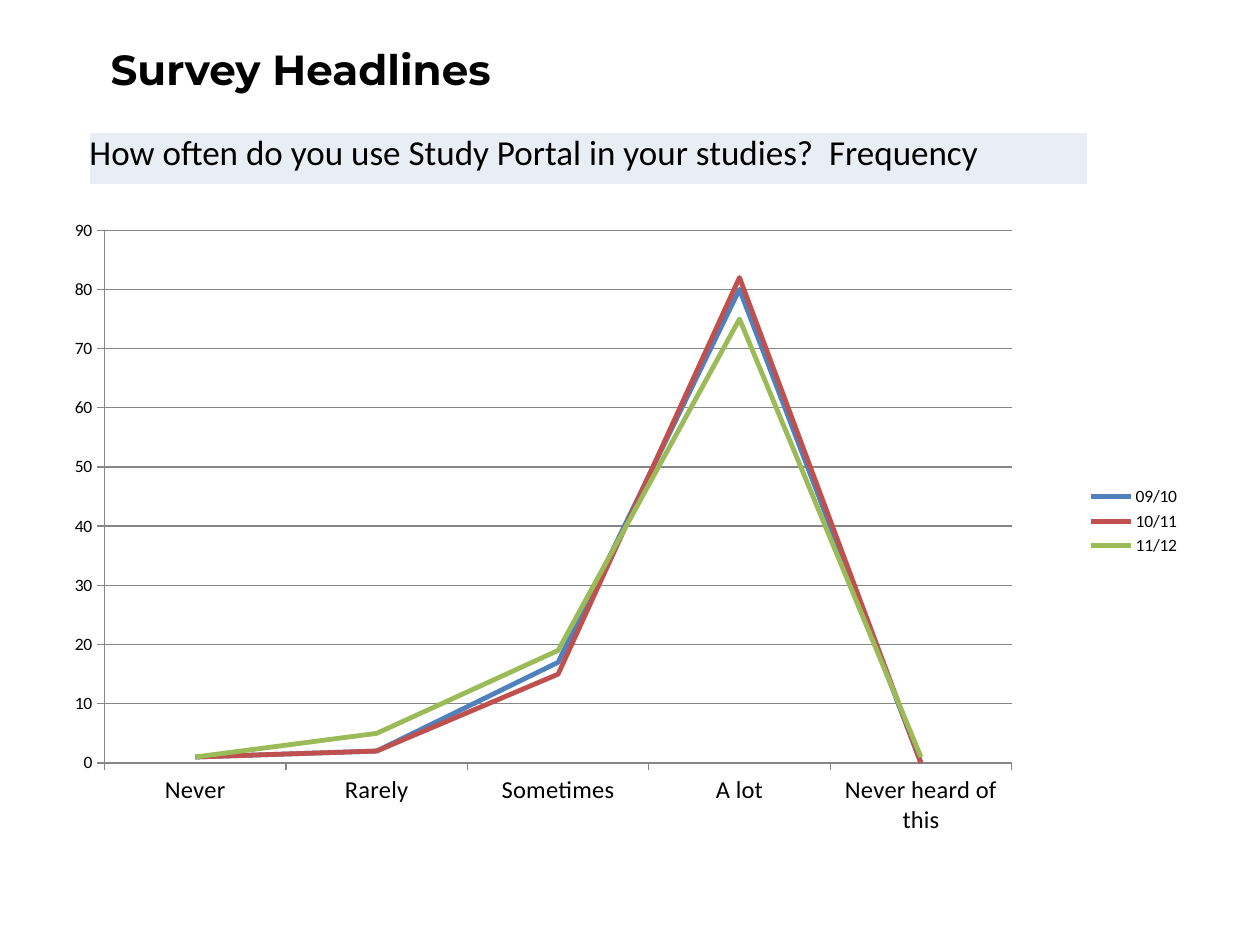
"""Build the survey headlines slide with its frequency line chart."""
from dataclasses import dataclass

from pptx import Presentation
from pptx.chart.data import CategoryChartData
from pptx.dml.color import RGBColor as Rgb
from pptx.enum.chart import XL_CHART_TYPE as ChartType
from pptx.enum.chart import XL_LEGEND_POSITION as LegendPosition
from pptx.enum.chart import XL_MARKER_STYLE as Marker
from pptx.enum.chart import XL_TICK_MARK as Tick
from pptx.oxml import parse_xml
from pptx.oxml.ns import nsdecls, qn
from pptx.util import Inches, Pt


@dataclass(frozen=True)
class Theme:
    ink: str = "000000"
    band: str = "E9EDF4"
    border: str = "FFFFFF"
    rule: str = "868686"
    series: tuple = ("4F81BD", "C0504D", "9BBB59")
    heading_font: str = "Montserrat"
    body_font: str = "Calibri"
    heading: int = 24
    question: int = 20
    category: int = 14
    label: int = 10


def style_font(font, name, size, color, bold=False):
    font.name, font.size, font.bold = name, Pt(size), bold
    font.color.rgb = Rgb.from_string(color)


def write_text(frame, text, *, font, size, color, bold=False):
    frame.word_wrap = True
    run = frame.paragraphs[0].add_run()
    run.text = text
    style_font(run.font, font, size, color, bold)


class SlideBuilder:
    def __init__(self, deck, theme):
        self.deck, self.theme = deck, theme
        self.slide = deck.slides.add_slide(deck.slide_layouts[6])

    def area(self, left, top, width, height):
        across, down = self.deck.slide_width, self.deck.slide_height
        return [int(share * side) for share, side in
                zip((left, top, width, height), (across, down, across, down))]

    def heading(self, text, *place):
        title = self.slide.shapes.add_textbox(*self.area(*place))
        write_text(title.text_frame, text, font=self.theme.heading_font,
                   size=self.theme.heading, color=self.theme.ink, bold=True)

    def banner(self, text, *place):
        table = self.slide.shapes.add_table(1, 1, *self.area(*place)).table
        table.first_row = table.horz_banding = False
        question = table.cell(0, 0)
        question.margin_left = question.margin_right = 0
        question.margin_top = question.margin_bottom = 0
        write_text(question.text_frame, text, font=self.theme.body_font,
                   size=self.theme.question, color=self.theme.ink)
        properties = question._tc.get_or_add_tcPr()
        for side in ("lnL", "lnR", "lnT", "lnB"):
            properties.append(parse_xml(
                f'<a:{side} {nsdecls("a")} w="12700"><a:solidFill>'
                f'<a:srgbClr val="{self.theme.border}"/></a:solidFill></a:{side}>'))
        question.fill.solid()
        question.fill.fore_color.rgb = Rgb.from_string(self.theme.band)

    def line_chart(self, categories, answers, plot_area, *place):
        theme = self.theme
        frequency = CategoryChartData(number_format="General")
        frequency.categories = categories
        for year, shares in answers.items():
            frequency.add_series(year, shares)
        chart = self.slide.shapes.add_chart(
            ChartType.LINE, *self.area(*place), frequency).chart
        chart.has_title = False
        style_font(chart.font, theme.body_font, theme.label, theme.ink)
        chart.has_legend = True
        chart.legend.position = LegendPosition.RIGHT
        chart.legend.include_in_layout = False
        chart.plots[0].vary_by_categories = False
        for series, color in zip(chart.plots[0].series, theme.series):
            series.smooth = False
            series.marker.style = Marker.NONE
            self.stroke(series.format.line, color, 2.75)
        style_font(chart.category_axis.tick_labels.font, theme.body_font,
                   theme.category, theme.ink)
        scale = chart.value_axis
        scale.minimum_scale, scale.maximum_scale, scale.major_unit = 0, 90, 10
        scale.has_major_gridlines = True
        self.stroke(scale.major_gridlines.format.line, theme.rule)
        for axis in (chart.category_axis, scale):
            axis.major_tick_mark, axis.minor_tick_mark = Tick.OUTSIDE, Tick.NONE
            self.stroke(axis.format.line, theme.rule)
        self.fix_plot(chart, plot_area)

    @staticmethod
    def stroke(line, color, width=0.75):
        line.color.rgb = Rgb.from_string(color)
        line.width = Pt(width)

    @staticmethod
    def fix_plot(chart, plot_area):
        plot = chart.element.find(".//" + qn("c:plotArea"))
        for layout in plot.findall(qn("c:layout")):
            plot.remove(layout)
        modes = '<c:xMode val="edge"/><c:yMode val="edge"/>'
        shares = "".join(f'<c:{key} val="{share}"/>'
                         for key, share in zip("xywh", plot_area))
        plot.insert(0, parse_xml(
            f'<c:layout {nsdecls("c")}><c:manualLayout>'
            f'<c:layoutTarget val="inner"/>{modes}{shares}'
            '</c:manualLayout></c:layout>'))


def main():
    deck = Presentation()
    deck.slide_width, deck.slide_height = Inches(10), Inches(7.5)
    survey = SlideBuilder(deck, Theme())
    survey.heading("Survey Headlines", 0.078, 0.04, 0.7, 0.088)
    survey.line_chart(
        ("Never", "Rarely", "Sometimes", "A lot", "Never heard of this"),
        {"09/10": (1, 2, 17, 80, 0),
         "10/11": (1, 2, 15, 82, 0),
         "11/12": (1, 5, 19, 75, 1)},
        (0.04, 0.03, 0.8, 0.86 + 0.03 - 0.03),
        0.047, 0.224, 0.9, 0.66)
    survey.banner("How often do you use Study Portal in your studies?  Frequency",
                  0.071, 0.14, 0.792, 0.056)
    deck.save("out.pptx")


if __name__ == "__main__":
    main()
